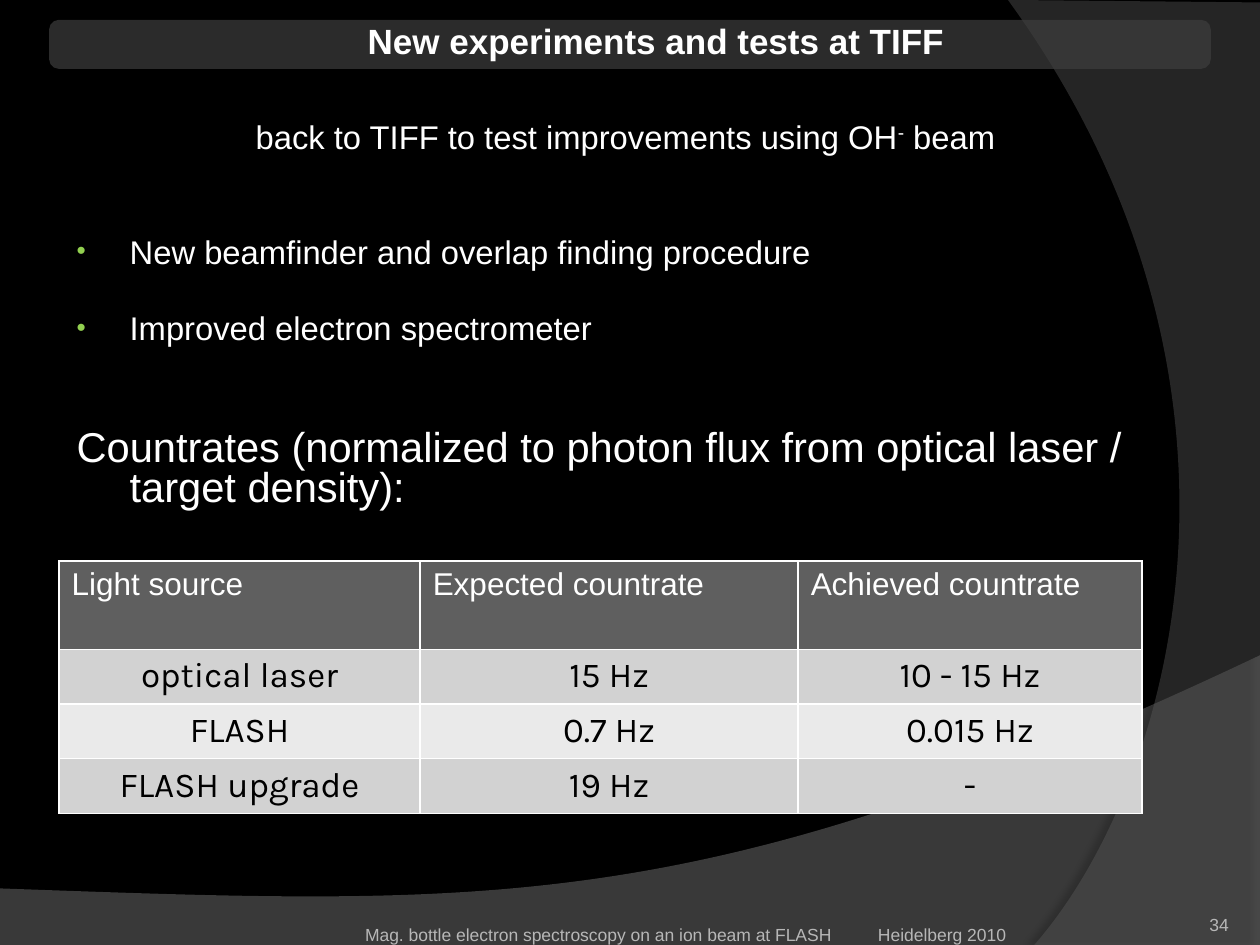
import dataclasses

import lxml.etree
import pptx
import pptx.dml.color
import pptx.enum.shapes
import pptx.enum.text
import pptx.oxml
import pptx.oxml.ns
import pptx.util

Cm = pptx.util.Cm
Pt = pptx.util.Pt
ALIGN = pptx.enum.text.PP_ALIGN
ANCHOR = pptx.enum.text.MSO_ANCHOR


@dataclasses.dataclass(frozen=True)
class Theme:
    background: str = "000000"
    text: str = "FFFFFF"
    footer: str = "B7B7B7"
    bullet: str = "92D050"
    wave: str = "7F7F7F"
    arc: str = "5E5E5E"
    band: str = "3E3E3E"
    header: str = "5F5F5F"
    rows: tuple = ("D2D2D2", "EAEAEA")
    cell_text: str = "000000"
    font: str = "Arial"
    cell_font: str = "Karla"
    title_size: float = 20
    body_size: float = 18.7
    lead_size: float = 23.8
    header_size: float = 18
    cell_size: float = 20
    footer_size: float = 10


def rgb(value):
    return pptx.dml.color.RGBColor.from_string(value)


def add_xml(parent, tag, **attributes):
    element = lxml.etree.SubElement(parent, pptx.oxml.ns.qn(tag))
    for name, value in attributes.items():
        element.set(name, str(value))
    return element


def write(paragraph, text, *, size, color, font, bold=False, align=ALIGN.LEFT,
          superscript=False):
    """Append one formatted run to the paragraph."""
    paragraph.alignment = align
    run = paragraph.add_run()
    run.text = text
    run.font.size = Pt(size)
    run.font.name = font
    run.font.bold = bold
    run.font.color.rgb = rgb(color)
    if superscript:
        run._r.get_or_add_rPr().set("baseline", "30000")


def indent(paragraph, margin, first_line=0, bullet=None):
    """Set indents, and either a coloured bullet or none."""
    properties = paragraph._p.get_or_add_pPr()
    properties.set("marL", str(Cm(margin)))
    properties.set("indent", str(Cm(first_line)))
    if bullet is None:
        add_xml(properties, "a:buNone")
        return
    add_xml(add_xml(properties, "a:buClr"), "a:srgbClr", val=bullet)
    add_xml(properties, "a:buSzPct", val=80000)
    add_xml(properties, "a:buFont", typeface="Arial")
    add_xml(properties, "a:buChar", char="•")


class SlideBuilder:
    def __init__(self, presentation, theme):
        self.theme = theme
        self.slide = presentation.slides.add_slide(presentation.slide_layouts[1])
        self.slide.background.fill.solid()
        self.slide.background.fill.fore_color.rgb = rgb(theme.background)

    def paint(self, shape, color, opacity):
        shape.shadow.inherit = False
        shape.line.fill.background()
        shape.fill.solid()
        shape.fill.fore_color.rgb = rgb(color)
        color_element = shape._element.spPr.find(".//" + pptx.oxml.ns.qn("a:srgbClr"))
        add_xml(color_element, "a:alpha", val=opacity * 1000)

    def swoosh(self, corners, controls, color, opacity, shadow):
        """Outline whose last side is a Bezier curve with the two controls.

        The shadow is opacity, blur, distance and angle.
        """
        corners = [(Cm(x), Cm(y)) for x, y in corners]
        builder = self.slide.shapes.build_freeform(*corners[0])
        builder.add_line_segments(corners[1:], close=True)
        shape = builder.convert_to_shape()

        last_side = shape._element.spPr.findall(".//" + pptx.oxml.ns.qn("a:lnTo"))[-1]
        last_side.tag = pptx.oxml.ns.qn("a:cubicBezTo")
        for position, (x, y) in enumerate(controls):
            point = add_xml(last_side, "a:pt", x=Cm(x) - shape.left, y=Cm(y) - shape.top)
            last_side.insert(position, point)

        self.paint(shape, color, opacity)
        strength, blur, distance, angle = shadow
        effects = shape._element.spPr.find(pptx.oxml.ns.qn("a:effectLst"))
        outer = add_xml(effects, "a:outerShdw", blurRad=Pt(blur), dist=Pt(distance),
                        dir=angle * 60000, algn="ctr", rotWithShape=0)
        add_xml(add_xml(outer, "a:srgbClr", val="000000"), "a:alpha", val=strength * 1000)

    def band(self, left, top, width, height):
        shape = self.slide.shapes.add_shape(
            pptx.enum.shapes.MSO_SHAPE.ROUNDED_RECTANGLE,
            Cm(left), Cm(top), Cm(width), Cm(height))
        shape.adjustments[0] = 0.2
        self.paint(shape, self.theme.band, 70)

    def placeholder(self, index, left, top, width, height, anchor):
        """Place a template placeholder in front and return its text frame."""
        shape = self.slide.placeholders[index]
        shape.left, shape.top, shape.width, shape.height = map(Cm, (left, top, width, height))
        self.slide.shapes._spTree.append(shape._element)
        frame = shape.text_frame
        frame.word_wrap = True
        frame.auto_size = pptx.enum.text.MSO_AUTO_SIZE.NONE
        frame.vertical_anchor = anchor
        return frame

    def title(self, text):
        frame = self.placeholder(0, 0.99, 0.26, 23.42, 1.12, ANCHOR.MIDDLE)
        paragraph = frame.paragraphs[0]
        indent(paragraph, 1.05)
        write(paragraph, text, size=self.theme.title_size, color=self.theme.text,
              font=self.theme.font, bold=True, align=ALIGN.CENTER)

    def body(self, items):
        """Each item: runs of (text, superscript), size, space before, indents, bullet."""
        frame = self.placeholder(1, 1.19, 2.38, 23.42, 8.94, ANCHOR.TOP)
        for number, (runs, size, space, margin, first_line, bullet) in enumerate(items):
            paragraph = frame.add_paragraph() if number else frame.paragraphs[0]
            paragraph.line_spacing = 0.8
            paragraph.space_before = Pt(space)
            indent(paragraph, margin, first_line, bullet)
            for text, superscript in runs:
                write(paragraph, text, size=size, color=self.theme.text,
                      font=self.theme.font, superscript=superscript)

    def footer(self, text, left, width, top, align, tab=None):
        box = self.slide.shapes.add_textbox(Cm(left), Cm(top), Cm(width), Cm(1.02))
        frame = box.text_frame
        frame.word_wrap = True
        frame.vertical_anchor = ANCHOR.BOTTOM
        frame.margin_left = frame.margin_right = frame.margin_top = frame.margin_bottom = 0
        paragraph = frame.paragraphs[0]
        if tab:
            tabs = add_xml(paragraph._p.get_or_add_pPr(), "a:tabLst")
            add_xml(tabs, "a:tab", pos=Cm(tab), algn="l")
        write(paragraph, text, size=self.theme.footer_size, color=self.theme.footer,
              font=self.theme.font, align=align)

    def cell_borders(self, cell):
        properties = cell._tc.get_or_add_tcPr()
        for position, tag in enumerate(("a:lnL", "a:lnR", "a:lnT", "a:lnB")):
            line = add_xml(properties, tag, w=Pt(1))
            add_xml(add_xml(line, "a:solidFill"), "a:srgbClr", val=self.theme.text)
            properties.insert(position, line)

    def table(self, rows, left, top, column_widths, row_heights):
        theme = self.theme
        table = self.slide.shapes.add_table(
            len(rows), len(column_widths), Cm(left), Cm(top),
            Cm(sum(column_widths)), Cm(sum(row_heights))).table
        for column, width in zip(table.columns, column_widths):
            column.width = Cm(width)
        for number, (row, height, texts) in enumerate(zip(table.rows, row_heights, rows)):
            row.height = Cm(height)
            header = number == 0
            fill = theme.header if header else theme.rows[(number - 1) % 2]
            style = (dict(size=theme.header_size, color=theme.text, font=theme.font)
                     if header else
                     dict(size=theme.cell_size, color=theme.cell_text,
                          font=theme.cell_font, align=ALIGN.CENTER))
            for cell, text in zip(row.cells, texts):
                cell.fill.solid()
                cell.fill.fore_color.rgb = rgb(fill)
                self.cell_borders(cell)
                write(cell.text_frame.paragraphs[0], text, **style)


def main():
    presentation = pptx.Presentation()
    presentation.slide_width, presentation.slide_height = Cm(25.4), Cm(19.05)
    theme = Theme()
    builder = SlideBuilder(presentation, theme)

    builder.swoosh([(0, 19.05), (25.4, 19.05), (25.4, 13.21), (0, 17.91)],
                   [(14.2, 18.52), (9.93, 18.26)], theme.wave, 45, (35, 4, 3.5, 270))
    builder.swoosh([(25.4, 0.05), (25.4, 19.05), (20.85, 19.05), (20.32, 0)],
                   [(23.75, 15.72), (25.86, 7.62)], theme.arc, 40, (45, 4, 4, 180))
    builder.band(0.99, 0.4, 23.42, 0.99)

    builder.footer("34", 22.66, 2.11, 17.83, ALIGN.RIGHT)
    builder.footer("Mag. bottle electron spectroscopy on an ion beam at FLASH\tHeidelberg 2010",
                   7.36, 14.13, 18.03, ALIGN.LEFT, tab=10.34)
    builder.table([
        ("Light source", "Expected countrate", "Achieved countrate"),
        ("optical laser", "15 Hz", "10 - 15 Hz"),
        ("FLASH", "0.7 Hz", "0.015 Hz"),
        ("FLASH upgrade", "19 Hz", "-"),
    ], 1.19, 11.31, (7.28, 7.62, 6.93), (1.78, 1.1, 1.1, 1.1))

    builder.title("New experiments and tests at TIFF")
    size, hanging = theme.body_size, (1.17, -1.07)
    builder.body([
        ([("back to TIFF to test improvements using OH", False), ("-", True),
          (" beam", False)], size, 0, 3.71, 0, None),
        ([("New beamfinder and overlap finding procedure", False)],
         size, 47.5, *hanging, theme.bullet),
        ([("Improved electron spectrometer", False)], size, 25.8, *hanging, theme.bullet),
        ([("Countrates (normalized to photon flux from optical laser / target density):",
           False)], theme.lead_size, 47.6, *hanging, None),
    ])
    presentation.save("out.pptx")


if __name__ == "__main__":
    main()
